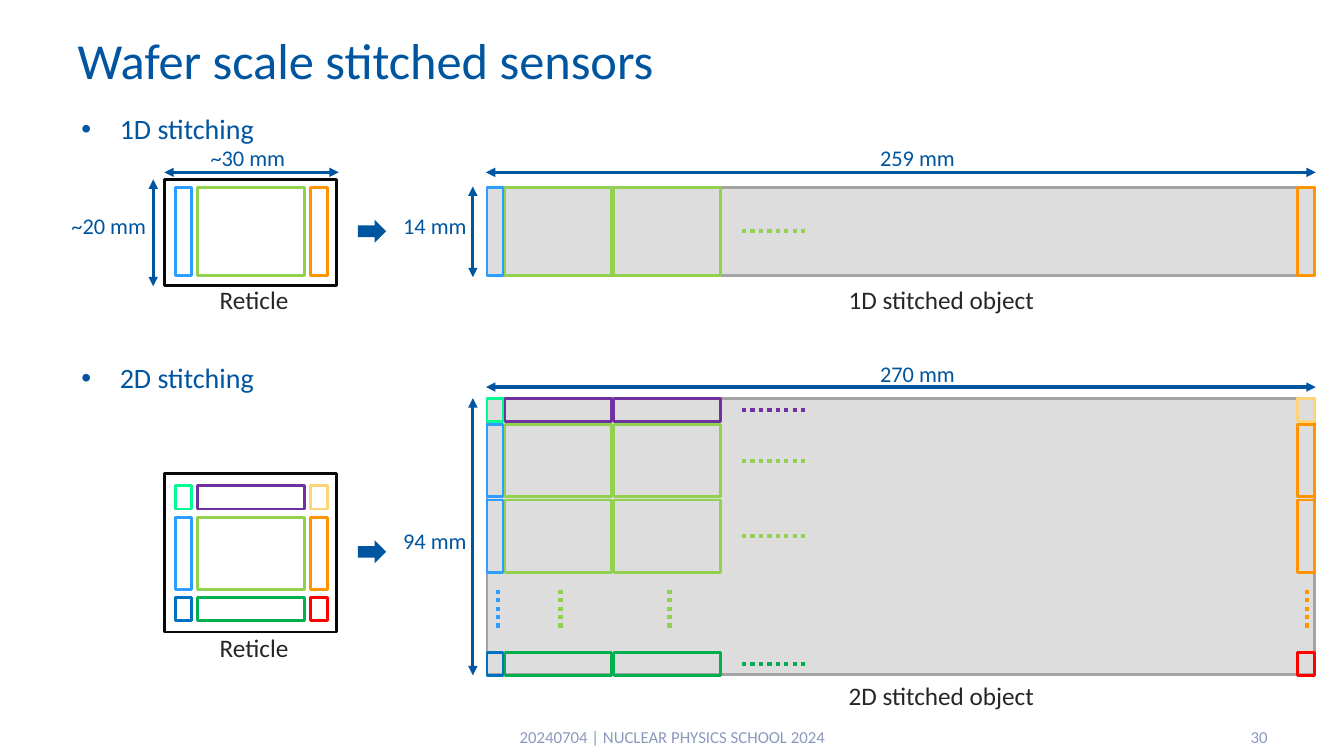
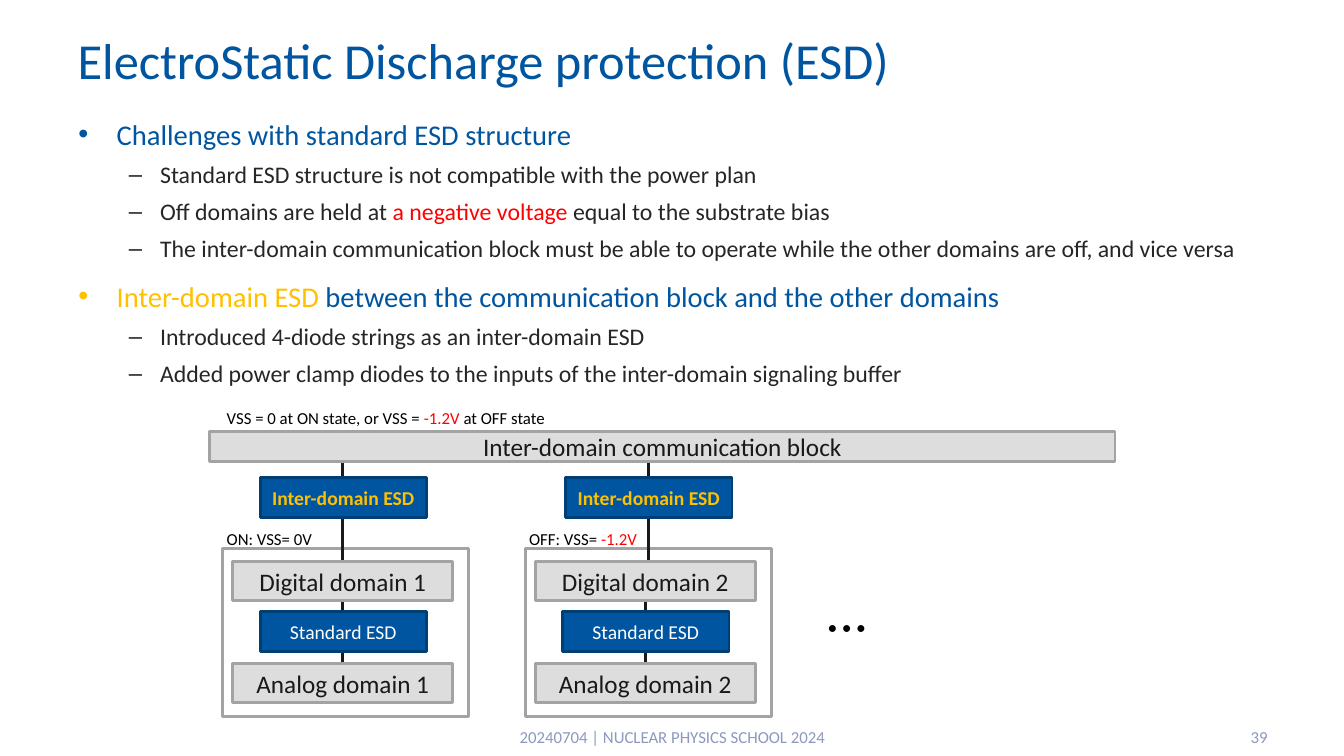
from dataclasses import dataclass
from itertools import product

from pptx import Presentation
from pptx.dml.color import RGBColor
from pptx.enum.dml import MSO_LINE
from pptx.enum.shapes import MSO_CONNECTOR, MSO_SHAPE as SHAPE
from pptx.enum.text import MSO_ANCHOR as ANCHOR, PP_ALIGN as ALIGN
from pptx.oxml.ns import qn
from pptx.util import Inches, Pt
from lxml.etree import SubElement


@dataclass(frozen=True)
class Theme:
    font: str = "Calibri"
    blue: str = "0055A0"
    dark_blue: str = "003F76"
    footer: str = "8C99BE"
    text: str = "262626"
    ink: str = "191919"
    black: str = "000000"
    frame: str = "080808"
    white: str = "FFFFFF"
    panel: str = "DDDDDD"
    edge: str = "A3A3A3"
    gold: str = "FFC000"
    red: str = "FF0000"
    mint: str = "00FB92"
    purple: str = "7030A0"
    sand: str = "FFD378"
    sky: str = "2D9DFF"
    lime: str = "92D050"
    orange: str = "FF9300"
    azure: str = "0070C0"
    green: str = "00B050"
    title_size: float = 36
    topic_size: float = 20
    point_size: float = 20.4
    detail_size: float = 17
    label_size: float = 18
    measure_size: float = 16
    small_size: float = 14
    note_size: float = 12


THEME = Theme()

# Each style: colour, font values, paragraph values, optional bullet (character, margin, hanging)
STYLES = {
    "title": (THEME.blue, {"size": Pt(THEME.title_size)}, {"alignment": ALIGN.LEFT}),
    "footer": (THEME.footer, {"size": Pt(THEME.note_size)}, {"alignment": ALIGN.CENTER}),
    "number": (THEME.footer, {"size": Pt(THEME.note_size)}, {"alignment": ALIGN.RIGHT}),
    "topic": (THEME.blue, {"size": Pt(THEME.topic_size)}, {}, ("•", 0.38, 0.38)),
    "point": (THEME.blue, {"size": Pt(THEME.point_size)}, {"space_before": Pt(12)},
              ("•", 0.38, 0.38)),
    "detail": (THEME.text, {"size": Pt(THEME.detail_size)},
               {"space_before": Pt(6), "level": 1}, ("–", 0.81, 0.31)),
    "label": (THEME.text, {"size": Pt(THEME.label_size)}, {"alignment": ALIGN.CENTER}),
    "block": (THEME.ink, {"size": Pt(THEME.label_size)}, {"alignment": ALIGN.CENTER}),
    "measure": (THEME.blue, {"size": Pt(THEME.measure_size)}, {}),
    "esd": (THEME.white, {"size": Pt(THEME.small_size)}, {"alignment": ALIGN.CENTER}),
    "esd_bold": (THEME.gold, {"size": Pt(THEME.small_size), "bold": True},
                 {"alignment": ALIGN.CENTER}),
    "dots": (THEME.black, {"size": Pt(THEME.small_size)}, {}),
    "note": (THEME.black, {"size": Pt(THEME.note_size)}, {"line_spacing": 0.9}),
}


def add_box(page, area, paragraphs=(), fill=None, line=None, kind=None,
            anchor=ANCHOR.TOP, wrap=True):
    """Add a preset shape, or a text box without kind; "title" fills the placeholder.

    Each paragraph is a style name followed by spans: text, or (text, colour).
    """
    area = [Inches(length) for length in area]
    if kind == "title":
        box = page.shapes.title
        for name, value in zip(("left", "top", "width", "height"), area):
            setattr(box, name, value)
    elif kind is None:
        box = page.shapes.add_textbox(*area)
    else:
        box = page.shapes.add_shape(kind, *area)
        box.shadow.inherit = False
        for part, color in ((box.fill, fill), (box.line.fill, line)):
            if color:
                part.solid()
                part.fore_color.rgb = RGBColor.from_string(color)
            else:
                part.background()
        if line:
            box.line.width = Pt(2)
    frame = box.text_frame
    frame.word_wrap = wrap
    frame.vertical_anchor = anchor
    for index, (style, *spans) in enumerate(paragraphs):
        color, font_values, para_values, *bullet = STYLES[style]
        para = frame.add_paragraph() if index else frame.paragraphs[0]
        for character, margin, hanging in bullet:
            properties = para._p.get_or_add_pPr()
            properties.set("marL", str(Inches(margin)))
            properties.set("indent", str(-Inches(hanging)))
            SubElement(properties, qn("a:buFont"), typeface="Arial")
            SubElement(properties, qn("a:buChar"), char=character)
        for name, value in para_values.items():
            if index or name != "space_before":
                setattr(para, name, value)
        for item in spans:
            text, span_color = (item, color) if isinstance(item, str) else item
            span = para.add_run()
            span.text = text
            for name, value in {"name": THEME.font, **font_values}.items():
                setattr(span.font, name, value)
            span.font.color.rgb = RGBColor.from_string(span_color)
    return box


def add_line(page, start, end, color, width=2.25, dotted=False, arrows=False):
    points = [Inches(length) for length in (*start, *end)]
    connector = page.shapes.add_connector(MSO_CONNECTOR.STRAIGHT, *points)
    connector.line.color.rgb = RGBColor.from_string(color)
    connector.line.width = Pt(width)
    if dotted:
        connector.line.dash_style = MSO_LINE.ROUND_DOT
    properties = connector._element.spPr
    if arrows:
        for tag in ("a:headEnd", "a:tailEnd"):
            SubElement(properties.find(qn("a:ln")), qn(tag), type="triangle")
    SubElement(properties, qn("a:effectLst"))


deck = Presentation()
deck.slide_width, deck.slide_height = Inches(13.33), Inches(7.5)
pages = []
for title, number in (("Wafer scale stitched sensors", "30"),
                      ("ElectroStatic Discharge protection (ESD)", "39")):
    page = deck.slides.add_slide(deck.slide_layouts[5])
    add_box(page, (0.67, 0.22, 12, 0.73), [("title", title)], kind="title",
            anchor=ANCHOR.MIDDLE)
    add_box(page, (2.93, 7.16, 7.48, 0.3),
            [("footer", "20240704 | NUCLEAR PHYSICS SCHOOL 2024")], anchor=ANCHOR.MIDDLE)
    add_box(page, (11.77, 7.16, 0.9, 0.3), [("number", number)], anchor=ANCHOR.MIDDLE)
    pages.append(page)
stitching, protection = pages

# Stitched sensors: every tile takes its colour from its row and its part (left, centre, right)
TOP = (THEME.mint, THEME.purple, THEME.sand)
MIDDLE = (THEME.sky, THEME.lime, THEME.orange)
BOTTOM = (THEME.azure, THEME.green, THEME.red)

for top, height in ((1.86, 0.87), (3.95, 2.74)):
    add_box(stitching, (4.83, top, 8.21, height), fill=THEME.panel, line=THEME.edge,
            kind=SHAPE.RECTANGLE)

reticle_columns = [(1.74, 0.16, 0), (1.96, 1.06, 1), (3.08, 0.17, 2)]
reticle_rows = [(1.86, 0.87, MIDDLE),
                (4.82, 0.23, TOP), (5.13, 0.72, MIDDLE), (5.93, 0.23, BOTTOM)]
wafer_columns = [(4.83, 0.16, 0), (5.01, 1.06, 1), (6.09, 1.06, 1), (12.87, 0.17, 2)]
wafer_rows = [(1.86, 0.87, MIDDLE), (3.95, 0.23, TOP), (4.21, 0.72, MIDDLE),
              (4.96, 0.72, MIDDLE), (6.47, 0.23, BOTTOM)]
for rows, columns in ((reticle_rows, reticle_columns), (wafer_rows, wafer_columns)):
    for (top, height, colors), (left, width, part) in product(rows, columns):
        add_box(stitching, (left, top, width, height), line=colors[part],
                kind=SHAPE.RECTANGLE)

for top, height, colors in wafer_rows:
    middle = top + height / 2
    add_line(stitching, (7.36, middle), (7.99, middle), colors[1], 3, dotted=True)
for x, part in ((4.94, 0), (5.56, 1), (6.64, 1), (12.96, 2)):
    add_line(stitching, (x, 5.85), (x, 6.24), MIDDLE[part], 3, dotted=True)

for name, topic_top, frame_top, frame_height, reticle_top, arrow_top, object_top in (
        ("1D", 1.06, 1.78, 1.05, 2.77, 2.18, 2.77),
        ("2D", 3.53, 4.7, 1.57, 6.22, 5.36, 6.7)):
    add_box(stitching, (0.71, topic_top, 2.2, 0.44), [("topic", f"{name} stitching")])
    add_box(stitching, (1.63, frame_top, 1.71, frame_height), line=THEME.frame,
            kind=SHAPE.RECTANGLE)
    add_box(stitching, (2.02, reticle_top, 1, 0.4), [("label", "Reticle")])
    add_box(stitching, (3.55, arrow_top, 0.28, 0.23), fill=THEME.blue,
            kind=SHAPE.RIGHT_ARROW)
    add_box(stitching, (7.99, object_top, 2.69, 0.4),
            [("label", f"{name} stitched object")])

measures = [
    ("~30 mm", (1.99, 1.38, 0.95), (1.63, 1.71), (3.36, 1.71)),
    ("~20 mm", (0.61, 2.06, 0.95), (1.52, 1.78), (1.52, 2.84)),
    ("259 mm", (8.63, 1.38, 0.95), (4.82, 1.71), (13.05, 1.71)),
    ("14 mm", (3.9, 2.06, 0.84), (4.69, 1.85), (4.69, 2.75)),
    ("270 mm", (8.63, 3.52, 0.95), (4.82, 3.84), (13.05, 3.84)),
    ("94 mm", (3.9, 5.18, 0.84), (4.69, 3.95), (4.69, 6.7)),
]
for text, place, start, end in measures:
    add_box(stitching, (*place, 0.37), [("measure", text)], wrap=False)
    add_line(stitching, start, end, THEME.blue, arrows=True)

# Discharge protection: the points, then one communication block over two domains
add_box(protection, (0.68, 1.11, 12, 2.66), [
    ("point", "Challenges with standard ESD structure"),
    ("detail", "Standard ESD structure is not compatible with the power plan"),
    ("detail", "Off domains are held at ", ("a negative voltage ", THEME.red),
     "equal to the substrate bias"),
    ("detail", "The inter-domain communication block must be able to operate while "
               "the other domains are off, and vice versa"),
    ("point", ("Inter-domain ESD", THEME.gold),
     " between the communication block and the other domains"),
    ("detail", "Introduced 4-diode strings as an inter-domain ESD"),
    ("detail", "Added power clamp diodes to the inputs of the inter-domain signaling buffer"),
])

domains = [(1, 2.58, ("ON: VSS= 0V",)),
           (2, 5.61, ("OFF: VSS=", (" -1.2V", THEME.red)))]
for number, link_left, state in domains:
    left = 2.21 + 3 * (number - 1)
    link_x, wire_x = link_left + 0.82, left + 1.19
    add_box(protection, (left, 5.44, 2.44, 1.67), line=THEME.edge, kind=SHAPE.RECTANGLE)
    add_box(protection, (left - 0.06, 5.22, 1.53, 0.42), [("note", *state)])
    for x, start, end in ((link_x, 4.52, 4.76), (link_x, 5.13, 5.58),
                          (wire_x, 5.94, 6.07), (wire_x, 6.45, 6.58)):
        add_line(protection, (x, start), (x, end), THEME.ink)
    for text, style, box_left, top, width, fill, line in (
            ("Inter-domain ESD", "esd_bold", link_left, 4.74, 1.65,
             THEME.blue, THEME.dark_blue),
            (f"Digital domain {number}", "block", left + 0.1, 5.57, 2.18,
             THEME.panel, THEME.edge),
            ("Standard ESD", "esd", left + 0.37, 6.07, 1.65, THEME.blue, THEME.dark_blue),
            (f"Analog domain {number}", "block", left + 0.1, 6.58, 2.18,
             THEME.panel, THEME.edge)):
        add_box(protection, (box_left, top, width, 0.39), [(style, text)], fill, line,
                SHAPE.RECTANGLE, ANCHOR.MIDDLE)

add_box(protection, (2.08, 4.28, 8.98, 0.3), [("block", "Inter-domain communication block")],
        THEME.panel, THEME.edge, SHAPE.RECTANGLE, ANCHOR.MIDDLE)
add_box(protection, (2.15, 4.02, 4.02, 0.22),
        [("note", "VSS = 0 at ON state, or VSS = ", ("-1.2V", THEME.red), " at OFF state")])
add_box(protection, (8.11, 6.05, 0.58, 0.34), [("dots", "• • •")], wrap=False)

deck.save("out.pptx")
